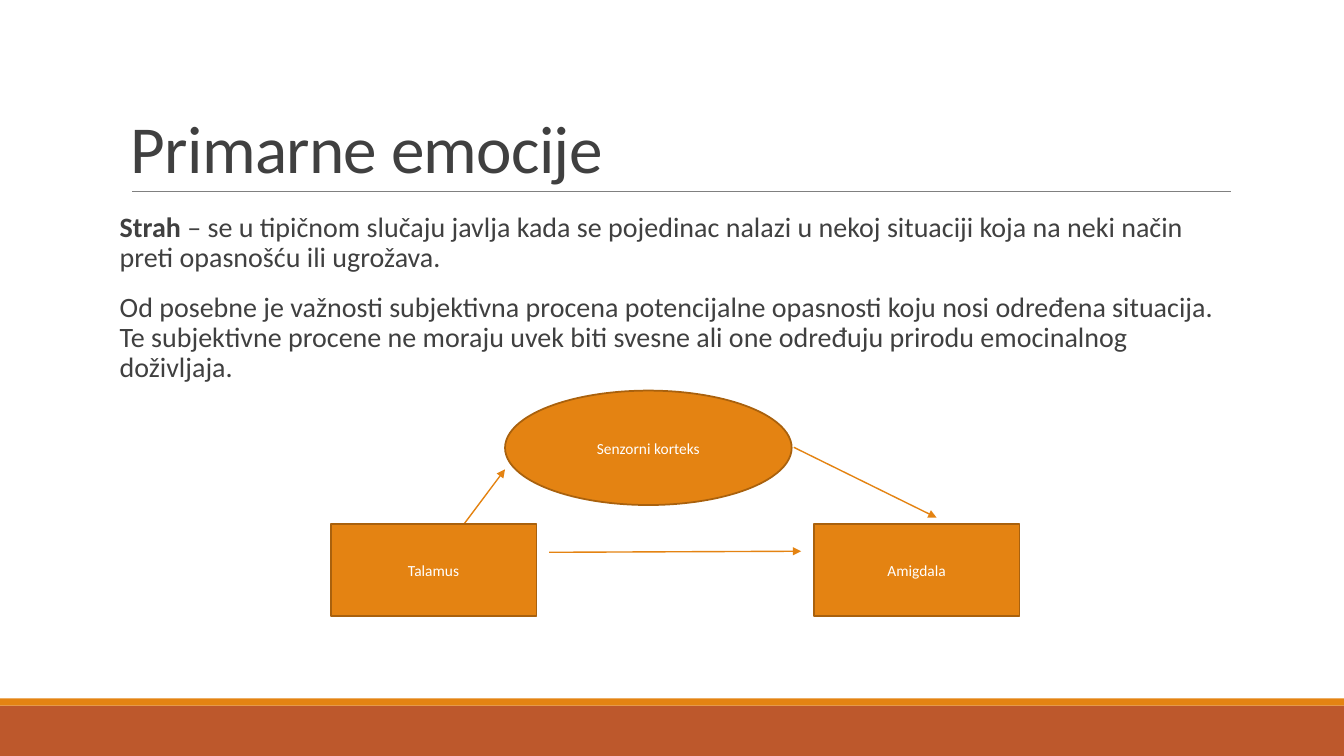
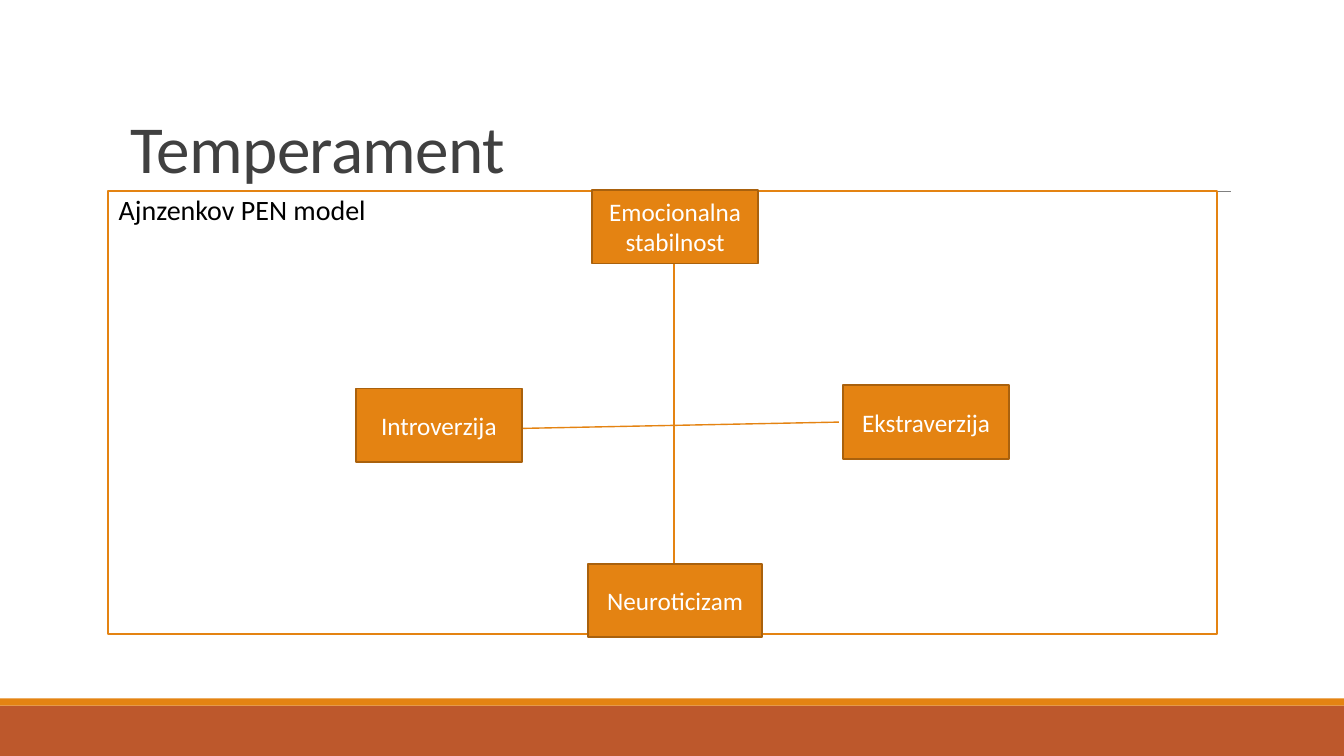
from lxml import etree
from pptx import Presentation
from pptx.dml.color import RGBColor
from pptx.enum.shapes import MSO_CONNECTOR, MSO_SHAPE
from pptx.enum.text import MSO_ANCHOR, MSO_AUTO_SIZE, PP_ALIGN
from pptx.oxml import parse_xml
from pptx.oxml.ns import nsdecls, qn
from pptx.util import Pt

PX = 9525
FONT = "Calibri"
COLORS = {
    "orange": "E48312",
    "brown": "A9610D",
    "rust": "BD582C",
    "gray": "808080",
    "text": "404040",
    "black": "000000",
    "white": "FFFFFF",
}
RGB = {name: RGBColor.from_string(value) for name, value in COLORS.items()}


def add_text(para, text, size=None, color=None, bold=None):
    span = para.add_run()
    span.text = text
    span.font.name = FONT
    span.font.bold = bold
    if size:
        span.font.size = Pt(size)
    if color:
        span.font.color.rgb = RGB[color]


def add_line(page, ends, color, width, arrow=False):
    line = page.shapes.add_connector(MSO_CONNECTOR.STRAIGHT, *(end * PX for end in ends))
    line.line.color.rgb = RGB[color]
    line.line.width = Pt(width)
    if arrow:
        outline = line.element.spPr.find(qn("a:ln"))
        etree.SubElement(outline, qn("a:tailEnd"), type="triangle")
    etree.SubElement(line.element.spPr, qn("a:effectLst"))
    return line


deck = Presentation()
deck.slide_width = 1280 * PX
deck.slide_height = 720 * PX
layout = deck.slide_layouts[1]

# Shared title and list styles
text_styles = {
    "p:titleStyle": f"""
        <a:lvl1pPr {nsdecls('a')} algn="l">
          <a:lnSpc><a:spcPct val="85000"/></a:lnSpc>
          <a:spcBef><a:spcPts val="0"/></a:spcBef>
          <a:buNone/>
          <a:defRPr sz="4800" spc="-50">
            <a:solidFill><a:srgbClr val="{COLORS['text']}"/></a:solidFill>
            <a:latin typeface="{FONT}"/>
          </a:defRPr>
        </a:lvl1pPr>""",
    "p:bodyStyle": f"""
        <a:lvl1pPr {nsdecls('a')} marL="{10 * PX}" indent="{-10 * PX}" algn="l">
          <a:lnSpc><a:spcPct val="90000"/></a:lnSpc>
          <a:spcBef><a:spcPts val="1200"/></a:spcBef>
          <a:spcAft><a:spcPts val="200"/></a:spcAft>
          <a:buClr><a:srgbClr val="{COLORS['orange']}"/></a:buClr>
          <a:buFont typeface="{FONT}"/>
          <a:buChar char=" "/>
          <a:defRPr sz="2000">
            <a:solidFill><a:srgbClr val="{COLORS['text']}"/></a:solidFill>
            <a:latin typeface="{FONT}"/>
          </a:defRPr>
        </a:lvl1pPr>""",
}
master_styles = deck.slide_master.element.find(qn("p:txStyles"))
for tag, xml in text_styles.items():
    style = master_styles.find(qn(tag))
    style.replace(style.find(qn("a:lvl1pPr")), parse_xml(xml))

slides = [
    {
        "title": "Primarne emocije",
        "body": (104, 198, 1056, 422),
        "framed": False,
        "paragraphs": [
            [("Strah ", {"bold": True}),
             ("– se u tipičnom slučaju javlja kada se pojedinac nalazi u nekoj "
              "situaciji koja na neki način preti opasnošću ili ugrožava.", {})],
            [("Od posebne je važnosti subjektivna procena potencijalne opasnosti "
              "koju nosi određena situacija. Te subjektivne procene ne moraju uvek "
              "biti svesne ali one određuju prirodu emocinalnog doživljaja.", {})],
        ],
        "lines": [(442, 499, 481, 447), (523, 526, 763, 525), (756, 426, 892, 493)],
        "arrows": True,
        "boxes": [
            ("Senzorni korteks", MSO_SHAPE.OVAL, (481, 372, 273, 109)),
            ("Amigdala", MSO_SHAPE.RECTANGLE, (775, 499, 196, 88)),
            ("Talamus", MSO_SHAPE.RECTANGLE, (315, 499, 196, 88)),
        ],
        "box_size": 11,
        "spacing": (1.07, 8),
    },
    {
        "title": "Temperament",
        "body": (103, 182, 1056, 422),
        "framed": True,
        "paragraphs": [[("Ajnzenkov PEN model", {"color": "black"})]],
        "lines": [(642, 243, 642, 572), (497, 408, 799, 402)],
        "arrows": False,
        "boxes": [
            ("Emocionalna stabilnost", MSO_SHAPE.RECTANGLE, (564, 181, 158, 70)),
            ("Neuroticizam", MSO_SHAPE.RECTANGLE, (560, 537, 166, 70)),
            ("Ekstraverzija", MSO_SHAPE.RECTANGLE, (803, 367, 158, 70)),
            ("Introverzija", MSO_SHAPE.RECTANGLE, (339, 370, 158, 70)),
        ],
        "box_size": 18,
        "spacing": (1, 0),
    },
]
pages = [deck.slides.add_slide(layout) for _ in slides]

# Bands and title rule are drawn on a page, then moved to the layout
layout_parts = []
for top, height, color in [(672, 48, "rust"), (665, 7, "orange")]:
    band = pages[0].shapes.add_shape(MSO_SHAPE.RECTANGLE, 0, top * PX, deck.slide_width, height * PX)
    band.shadow.inherit = False
    band.fill.solid()
    band.fill.fore_color.rgb = RGB[color]
    band.line.fill.background()
    layout_parts.append(band)
layout_parts.append(add_line(pages[0], (126, 182, 1172, 182), "gray", 0.5))
for number, part in enumerate(layout_parts, start=101):
    part.element.xpath(".//p:cNvPr")[0].set("id", str(number))
    layout.shapes.element.append(part.element)

for page, content in zip(pages, slides):
    title = page.shapes.title
    body = page.placeholders[1]
    for holder, place in [(title, (115, 30, 1056, 153)), (body, content["body"])]:
        holder.left, holder.top, holder.width, holder.height = (value * PX for value in place)
        holder.text_frame.auto_size = MSO_AUTO_SIZE.NONE
    title.text_frame.vertical_anchor = MSO_ANCHOR.BOTTOM
    add_text(title.text_frame.paragraphs[0], content["title"])

    frame = body.text_frame
    frame.vertical_anchor = MSO_ANCHOR.TOP
    frame.margin_left = frame.margin_right = 0
    frame.margin_top = frame.margin_bottom = 5 * PX
    for index, spans in enumerate(content["paragraphs"]):
        para = frame.add_paragraph() if index else frame.paragraphs[0]
        for text, style in spans:
            add_text(para, text, **style)
    if content["framed"]:
        body.fill.solid()
        body.fill.fore_color.rgb = RGB["white"]
        body.line.color.rgb = RGB["orange"]
        body.line.width = Pt(1.25)

    for ends in content["lines"]:
        add_line(page, ends, "orange", 1, arrow=content["arrows"])

    for text, kind, place in content["boxes"]:
        box = page.shapes.add_shape(kind, *(value * PX for value in place))
        box.shadow.inherit = False
        box.fill.solid()
        box.fill.fore_color.rgb = RGB["orange"]
        box.line.color.rgb = RGB["brown"]
        box.line.width = Pt(1.25)
        box.text_frame.word_wrap = True
        box.text_frame.vertical_anchor = MSO_ANCHOR.MIDDLE
        para = box.text_frame.paragraphs[0]
        para.alignment = PP_ALIGN.CENTER
        line_spacing, space_after = content["spacing"]
        para.line_spacing = float(line_spacing)
        para.space_after = Pt(space_after)
        add_text(para, text, size=content["box_size"], color="white")

deck.save("out.pptx")
